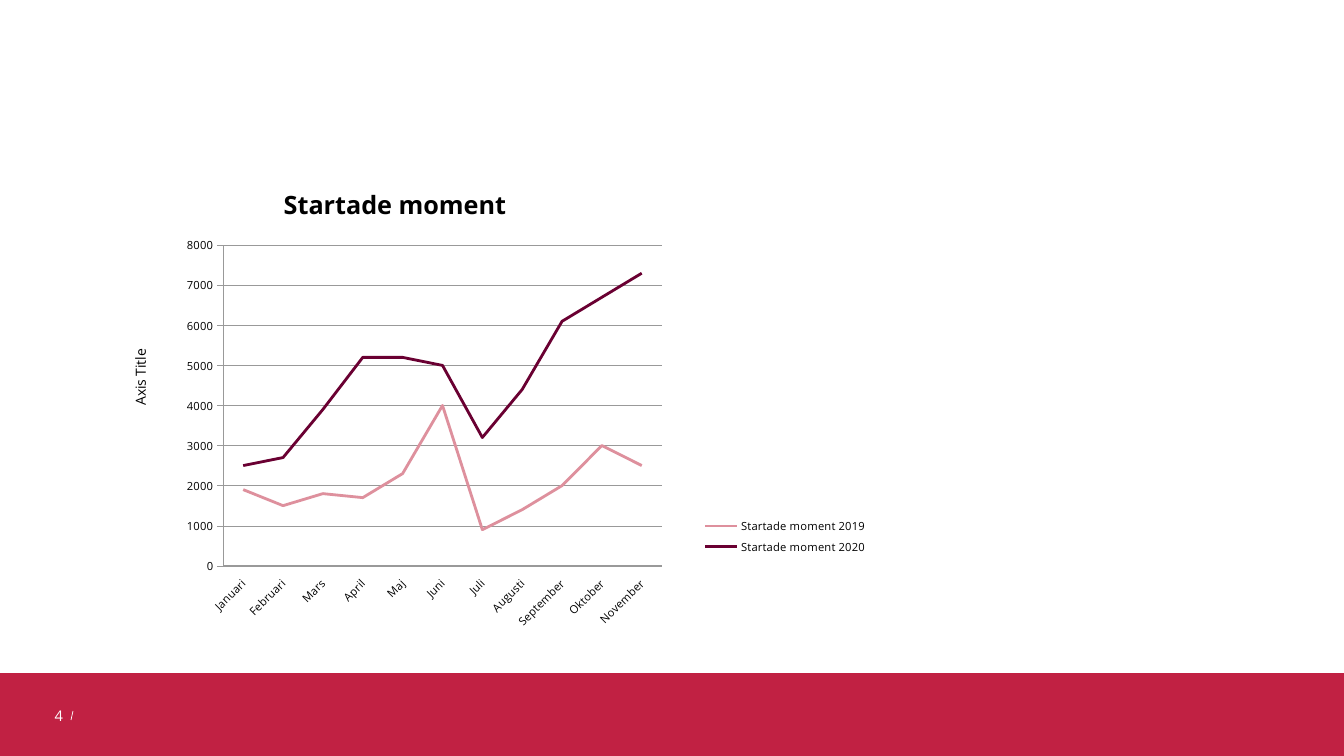
import pptx
import pptx.chart.data
import pptx.dml.color
import pptx.enum.chart
import pptx.enum.shapes
import pptx.enum.text
import pptx.oxml
import pptx.oxml.ns
import pptx.util

PX = 9071
qn = pptx.oxml.ns.qn
Pt = pptx.util.Pt
XL = pptx.enum.chart


def rgb(value):
    return pptx.dml.color.RGBColor.from_string(value)


def place(el, index, **box):
    for old in el.findall(qn("c:layout")):
        el.remove(old)
    marks = "".join(f'<c:{k} val="{v}"/>' for k, v in box.items())
    el.insert(index, pptx.oxml.parse_xml(
        f'<c:layout {pptx.oxml.ns.nsdecls("c")}><c:manualLayout>{marks}'
        '</c:manualLayout></c:layout>'))


prs = pptx.Presentation()
prs.slide_width, prs.slide_height = 1344 * PX, 756 * PX
s = prs.slides.add_slide(prs.slide_layouts[6])

footer = s.shapes.add_shape(pptx.enum.shapes.MSO_SHAPE.RECTANGLE,
                            0, 673 * PX, 1344 * PX, 83 * PX)
footer.shadow.inherit = False
footer.fill.solid()
footer.fill.fore_color.rgb = rgb("C12143")
footer.line.fill.background()

slash = s.shapes.add_connector(pptx.enum.shapes.MSO_CONNECTOR.STRAIGHT,
                               73 * PX, 711 * PX, 71 * PX, 720 * PX)
slash.line.color.rgb = rgb("FFFFFF")
slash.line.width = Pt(0.5)
slash._element.spPr.append(pptx.oxml.parse_xml(
    f'<a:effectLst {pptx.oxml.ns.nsdecls("a")}/>'))

number = s.shapes.add_textbox(30 * PX, 696 * PX, 43 * PX, 40 * PX)
tf = number.text_frame
tf.word_wrap = True
tf.vertical_anchor = pptx.enum.text.MSO_ANCHOR.MIDDLE
p = tf.paragraphs[0]
p.alignment = pptx.enum.text.PP_ALIGN.RIGHT
r = p.add_run()
r.text = "4"

data = pptx.chart.data.CategoryChartData()
data.categories = ["Januari", "Februari", "Mars", "April", "Maj", "Juni", "Juli",
                   "Augusti", "September", "Oktober", "November"]
series = [
    ("Startade moment 2019", "DE909D",
     [1900, 1500, 1800, 1700, 2300, 4000, 900, 1400, 2000, 3000, 2500]),
    ("Startade moment 2020", "6A0032",
     [2500, 2700, 3900, 5200, 5200, 5000, 3200, 4400, 6100, 6700, 7300]),
]
for name, color, values in series:
    data.add_series(name, values)
chart = s.shapes.add_chart(XL.XL_CHART_TYPE.LINE, 109 * PX, 166 * PX,
                           896 * PX, 463 * PX, data).chart
for line, (name, color, values) in zip(chart.plots[0].series, series):
    line.smooth = False
    line.marker.style = XL.XL_MARKER_STYLE.NONE
    line.format.line.color.rgb = rgb(color)
    line.format.line.width = Pt(2)
chart.plots[0].vary_by_categories = False

chart.has_title = True
title = chart.chart_title
title.text_frame.text = "Startade moment"

cat, val = chart.category_axis, chart.value_axis
cat.tick_label_position = XL.XL_TICK_LABEL_POSITION.LOW
cat.major_tick_mark = XL.XL_TICK_MARK.NONE
val.major_tick_mark = XL.XL_TICK_MARK.OUTSIDE
val.minimum_scale, val.maximum_scale, val.major_unit = 0, 8000, 1000
val.has_major_gridlines = True
for fmt, width in ((cat.format, 1), (val.format, 0.25),
                   (val.major_gridlines.format, 0.25)):
    fmt.line.color.rgb = rgb("999999")
    fmt.line.width = Pt(width)
val.has_title = True
val_title = val.axis_title
val_title.text_frame.text = "Axis Title"

chart.has_legend = True
legend = chart.legend
legend.position = XL.XL_LEGEND_POSITION.RIGHT
legend.include_in_layout = False

fonts = [
    (r.font, 10.5, False, "FFFFFF"),
    (chart.font, 10, True, "000000"),
    (title.text_frame.paragraphs[0].runs[0].font, 18, True, "000000"),
    (val_title.text_frame.paragraphs[0].runs[0].font, 10, False, "000000"),
    (cat.tick_labels.font, 8, False, "000000"),
    (val.tick_labels.font, 8, False, "000000"),
    (legend.font, 8, False, "000000"),
]
for font, size, bold, color in fonts:
    for key, value in {"name": "Open Sans", "size": Pt(size), "bold": bold}.items():
        setattr(font, key, value)
    font.color.rgb = rgb(color)

for el, angle in ((cat._element.find(qn("c:txPr")), -45),
                  (val_title.text_frame._txBody, -90)):
    body = el.find(qn("a:bodyPr"))
    body.set("rot", str(angle * 60000))
    body.set("vert", "horz")

place(chart._chartSpace.chart.plotArea, 0, layoutTarget="outer", xMode="edge",
      yMode="edge", x=0.087, y=0.154, w=0.53, h=0.846)
place(title._element, 1, xMode="edge", yMode="edge", x=0.19, y=0.03)
place(val_title._element, 1, xMode="edge", yMode="edge", x=0.02, y=0.39)
place(legend._element, 1, xMode="edge", yMode="edge", x=0.66, y=0.75, w=0.19, h=0.1)

prs.save("out.pptx")
